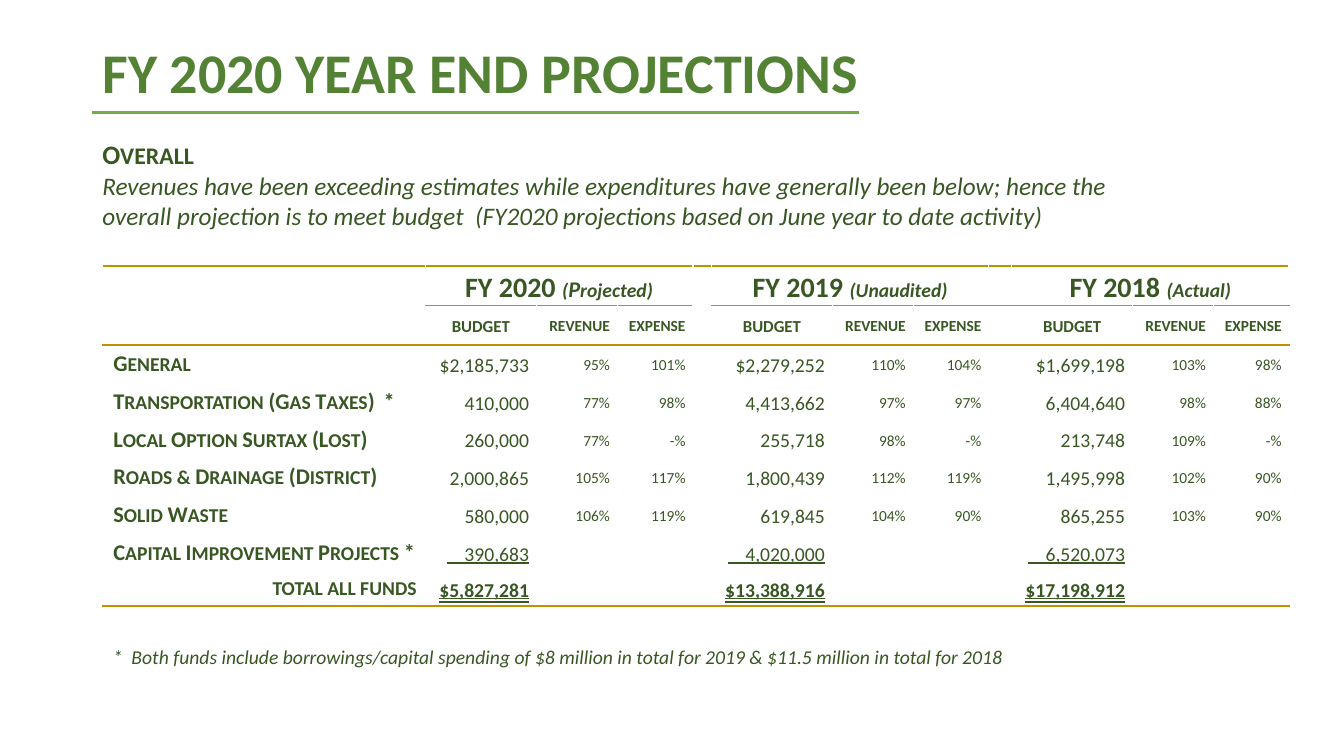
"""Build the FY 2020 year end projections slide."""
import itertools
from dataclasses import dataclass

import pptx
import pptx.dml.color
import pptx.enum.shapes
import pptx.enum.text
import pptx.oxml
import pptx.oxml.ns
import pptx.util

PX = 9525
ALIGN = pptx.enum.text.PP_ALIGN
MIDDLE = pptx.enum.text.MSO_ANCHOR.MIDDLE
DOUBLE = pptx.enum.text.MSO_UNDERLINE.DOUBLE_LINE


@dataclass(frozen=True)
class Theme:
    font: str = "Calibri"
    title: str = "548235"
    text: str = "385723"
    accent: str = "70AD47"
    gold: str = "BF9000"
    white: str = "FFFFFF"
    title_size: int = 40
    year_size: int = 20
    lead_size: int = 18
    cap_size: int = 16
    body_size: int = 14
    budget_size: int = 12
    small_size: int = 11


T = Theme()


def write(p, pieces, bold=False, italic=False, underline=None, color=T.text):
    """Add (text, size) pieces to a paragraph as formatted runs."""
    for text, size in pieces:
        r = p.add_run()
        r.text = text
        f = r.font
        f.name, f.size = T.font, pptx.util.Pt(size)
        f.bold, f.italic, f.underline = bold, italic, underline
        f.color.rgb = pptx.dml.color.RGBColor.from_string(color)


def small_caps(text, cap, small):
    """Split mixed-case text into capitals at two sizes."""
    groups = itertools.groupby(text, lambda c: c.islower() or c in "& ")
    return [("".join(g).upper(), small if low else cap) for low, g in groups]


prs = pptx.Presentation()
prs.slide_width, prs.slide_height = 1280 * PX, 720 * PX
s = prs.slides.add_slide(prs.slide_layouts[5])

title = s.shapes.title
title.left, title.top, title.width, title.height = 88 * PX, 38 * PX, 1104 * PX, 139 * PX
tf = title.text_frame
tf.vertical_anchor = pptx.enum.text.MSO_ANCHOR.TOP
p = tf.paragraphs[0]
p.alignment, p.line_spacing = ALIGN.LEFT, 0.9
write(p, [("FY 2020 YEAR END PROJECTIONS", T.title_size)], bold=True, color=T.title)

rule = s.shapes.add_connector(
    pptx.enum.shapes.MSO_CONNECTOR.STRAIGHT, 88 * PX, 107 * PX, 818 * PX, 107 * PX)
rule.line.color.rgb = pptx.dml.color.RGBColor.from_string(T.accent)
rule.line.width = pptx.util.Pt(2)
rule._element.spPr.append(pptx.oxml.parse_xml(
    f"<a:effectLst {pptx.oxml.ns.nsdecls('a')}/>"))

FUNDS = [
    ("General", ("$2,185,733", "95%", "101%"), ("$2,279,252", "110%", "104%"),
     ("$1,699,198", "103%", "98%")),
    ("Transportation (Gas Taxes)  *", ("410,000", "77%", "98%"),
     ("4,413,662", "97%", "97%"), ("6,404,640", "98%", "88%")),
    ("Local Option Surtax (Lost)", ("260,000", "77%", "-%"),
     ("255,718", "98%", "-%"), ("213,748", "109%", "-%")),
    ("Roads & Drainage (District)", ("2,000,865", "105%", "117%"),
     ("1,800,439", "112%", "119%"), ("1,495,998", "102%", "90%")),
    ("Solid Waste", ("580,000", "106%", "119%"), ("619,845", "104%", "90%"),
     ("865,255", "103%", "90%")),
    ("Capital Improvement Projects *", ("    390,683",), ("    4,020,000",),
     ("    6,520,073",)),
    ("total all funds", ("$5,827,281",), ("$13,388,916",), ("$17,198,912",)),
]
YEARS = {
    1: [("FY 2020 ", T.year_size), ("(", T.body_size), ("P", T.cap_size),
        ("rojected)", T.body_size)],
    5: [("FY 2019 ", T.year_size), ("(Unaudited)", T.body_size)],
    9: [("FY 2018 ", T.year_size), ("(Actual)", T.body_size)],
}
COLS = [307, 106, 77, 72, 17, 115, 77, 72, 22, 115, 77, 72]
ROWS = [37, 38] + [36] * 6 + [33]
TOTAL = len(ROWS) - 1

table = s.shapes.add_table(len(ROWS), len(COLS), 98 * PX, 253 * PX,
                           sum(COLS) * PX, sum(ROWS) * PX).table
table.first_row = table.horz_banding = False
for col, width in zip(table.columns, COLS):
    col.width = width * PX
for row, height in zip(table.rows, ROWS):
    row.height = height * PX

white, thin, thick = (T.white, 1), (T.gold, 1), (T.gold, 1.5)
levels = {0: thick, 1: thin, 2: thin, len(ROWS): thick}
for i, j in itertools.product(range(len(ROWS)), range(len(COLS))):
    cell = table.cell(i, j)
    cell.vertical_anchor = MIDDLE
    cell.margin_left = cell.margin_right = 7 * PX
    cell.margin_top = cell.margin_bottom = 0
    top, bottom = [white if k == 1 and j in (0, 4) else levels.get(k, white)
                   for k in (i, i + 1)]
    tcPr = cell._tc.get_or_add_tcPr()
    for tag, (color, width) in zip(("lnL", "lnR", "lnT", "lnB"), (white, white, top, bottom)):
        tcPr.append(pptx.oxml.parse_xml(
            f"<a:{tag} {pptx.oxml.ns.nsdecls('a')} w='{int(width * 12700)}'>"
            f"<a:solidFill><a:srgbClr val='{color}'/></a:solidFill></a:{tag}>"))
    cell.fill.background()

for start, pieces in YEARS.items():
    table.cell(0, start).merge(table.cell(0, start + 2))
    p = table.cell(0, start).text_frame.paragraphs[0]
    p.alignment, p.line_spacing = ALIGN.CENTER, 1.15
    write(p, pieces, bold=True)
    for r in p.runs[1:]:
        r.font.italic = True
    for j, heading in enumerate(("BUDGET", "REVENUE", "EXPENSE")):
        p = table.cell(1, start + j).text_frame.paragraphs[0]
        p.alignment, p.line_spacing = ALIGN.RIGHT if j else ALIGN.CENTER, 1.15
        write(p, [(heading, T.small_size if j else T.budget_size)], bold=True)

for i, (fund, *years) in enumerate(FUNDS, 2):
    cell = table.cell(i, 0)
    cell.margin_left, cell.margin_right = 10 * PX, 8 * PX
    p = cell.text_frame.paragraphs[0]
    p.alignment = ALIGN.RIGHT if i == TOTAL else ALIGN.LEFT
    write(p, small_caps(fund, T.cap_size, T.body_size), bold=True)
    underline = {TOTAL - 1: True, TOTAL: DOUBLE}.get(i)
    for start, values in zip(YEARS, years):
        for j, value in enumerate(values):
            p = table.cell(i, start + j).text_frame.paragraphs[0]
            p.alignment, p.line_spacing = ALIGN.RIGHT, 1.15
            write(p, [(value, T.small_size if j else T.body_size)],
                  bold=i == TOTAL, underline=underline)

tf = s.shapes.add_textbox(88 * PX, 130 * PX, 1010 * PX, 95 * PX).text_frame
tf.word_wrap = True
p = tf.paragraphs[0]
p.line_spacing, p.space_before = 0.9, pptx.util.Pt(5)
write(p, small_caps("Overall", 19, 17), bold=True)
write(tf.add_paragraph(), [(
    "Revenues have been exceeding estimates while expenditures have generally been below; "
    "hence the overall projection is to meet budget  (FY2020 projections based on June "
    "year to date activity)", T.lead_size)], italic=True)

tf = s.shapes.add_textbox(98 * PX, 609 * PX, 879 * PX, 32 * PX).text_frame
tf.word_wrap = True
write(tf.paragraphs[0], [(
    "*  Both funds include borrowings/capital spending of $8 million in total for 2019 "
    "& $11.5 million in total for 2018", T.body_size)], italic=True)

prs.save("out.pptx")
